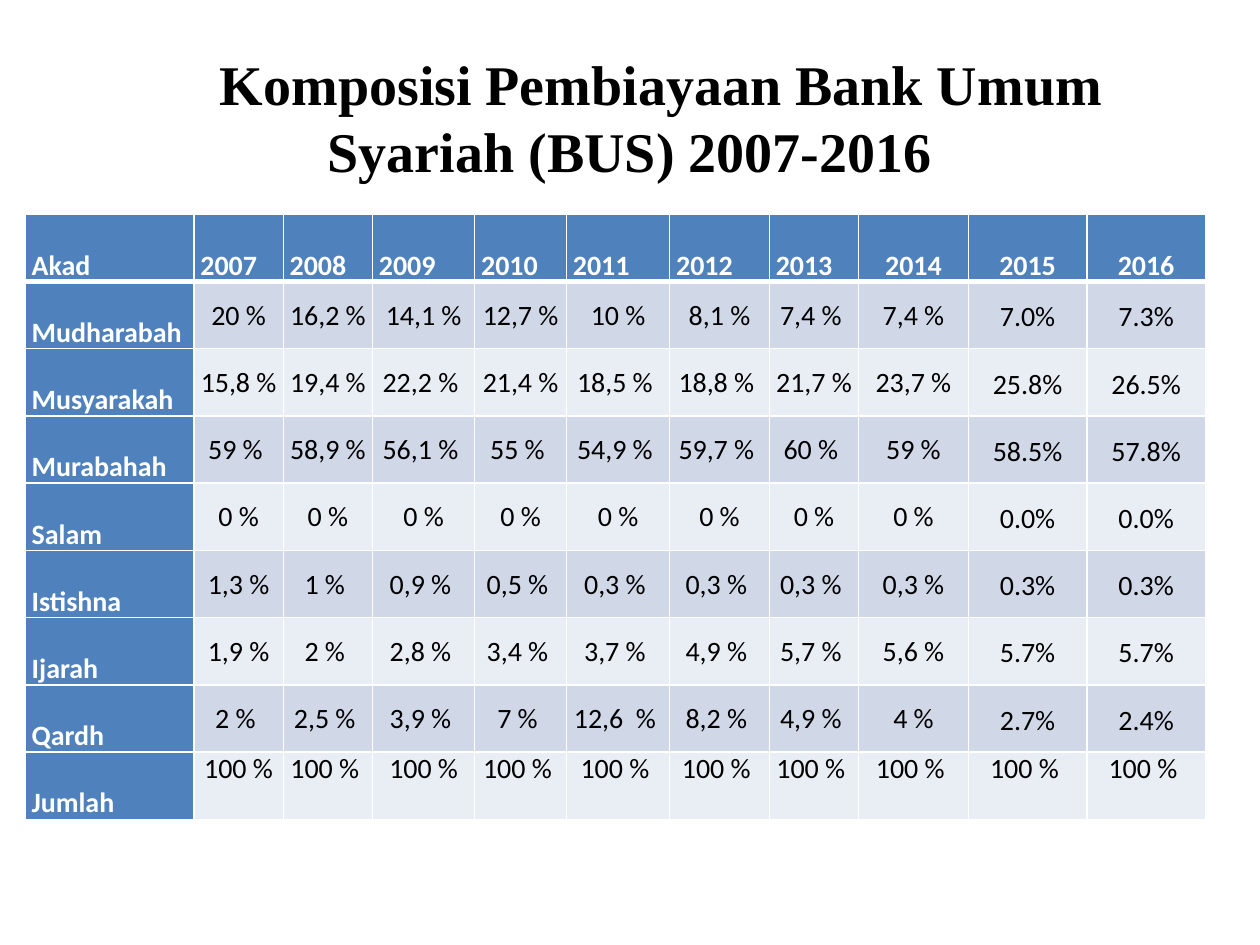
from lxml.etree import SubElement
from pptx import Presentation
from pptx.dml.color import RGBColor as RGB
from pptx.enum.text import MSO_ANCHOR as Anchor, PP_ALIGN as Align
from pptx.oxml.ns import qn
from pptx.util import Cm, Pt

COLORS = {"ink": "000000", "paper": "FFFFFF", "head": "4F81BD",
          "odd": "D0D8E8", "even": "E9EDF4"}

YEARS = range(2007, 2017)
COLUMN_WIDTHS = [3.4, 1.8, 1.8, 2.06, 1.85, 2.08, 2.01, 1.8, 2.21, 2.39, 2.39]
ROW_HEIGHT = 1.22
FIRST_CENTRED_YEAR = 8   # column of 2014
FIRST_TIGHT_YEAR = 9     # column of 2015

# Shares per contract and year; a trailing space shifts the centred figure
SHARES = {
    "Mudharabah": "20 %|16,2 %|14,1 %|12,7 %|10 %|8,1 %|7,4 % |7,4 %|7.0%|7.3%",
    "Musyarakah": "15,8 % |19,4 %|22,2 % |21,4 % |18,5 % |18,8 % |21,7 % |23,7 %|25.8%|26.5%",
    "Murabahah": "59 % |58,9 % |56,1 % |55 % |54,9 % |59,7 % |60 % |59 %|58.5%|57.8%",
    "Salam": "0 %|0 %|0 %|0 %|0 %|0 %|0 %|0 %|0.0%|0.0%",
    "Istishna": "1,3 %|1 % |0,9 % |0,5 % |0,3 % |0,3 % |0,3 % |0,3 %|0.3%|0.3%",
    "Ijarah": "1,9 %|2 % |2,8 % |3,4 % |3,7 % |4,9 % |5,7 % |5,6 %|5.7%|5.7%",
    "Qardh": "2 % |2,5 % |3,9 % |7 % |12,6  % |8,2 % |4,9 % |4 %|2.7%|2.4%",
    "Jumlah": "100 %|100 % |100 %|100 % |100 % |100 % |100 % |100 % |100 % |100 % ",
}


class Deck:
    def __init__(self, slide, colors):
        self.slide = slide
        self.colors = colors

    def text(self, frame, words, font, size, color, bold, align, spacing=1.0):
        paragraph = frame.paragraphs[0]
        paragraph.text = words
        paragraph.alignment = align
        paragraph.line_spacing = spacing
        paragraph.font.name = font
        paragraph.font.size = Pt(size)
        paragraph.font.bold = bold
        paragraph.font.color.rgb = RGB.from_string(self.colors[color])
        return paragraph

    def title(self, words, left, top, width, height):
        frame = self.slide.shapes.add_textbox(
            Cm(left), Cm(top), Cm(width), Cm(height)).text_frame
        frame.word_wrap = True
        frame.vertical_anchor = Anchor.MIDDLE
        paragraph = self.text(frame, words, "Times New Roman", 32, "ink", True, Align.CENTER)
        paragraph._p.get_or_add_pPr().set("indent", str(Cm(1.27)))

    def borders(self, cell, top, bottom):
        properties = cell._tc.get_or_add_tcPr()
        for side, points in (("L", 1), ("R", 1), ("T", top), ("B", bottom)):
            line = SubElement(properties, qn(f"a:ln{side}"), w=str(Pt(points)))
            fill = SubElement(line, qn("a:solidFill"))
            SubElement(fill, qn("a:srgbClr"), val=self.colors["paper"])

    def cell(self, cell, words, row, column, last_row):
        is_label = row == 0 or column == 0
        is_tight = 0 < row < last_row and column >= FIRST_TIGHT_YEAR
        # Borders come before the fill in the cell properties
        self.borders(cell, top=3 if row == 1 else 1, bottom=3 if row == 0 else 1)
        fill = "head" if is_label else ("odd" if row % 2 else "even")
        cell.fill.solid()
        cell.fill.fore_color.rgb = RGB.from_string(self.colors[fill])
        cell.margin_left = cell.margin_right = Cm(0.03 if is_tight else 0.13)
        cell.margin_top = Cm(0.03 if is_tight else 0)
        cell.margin_bottom = Cm(0)
        if is_label:
            centred = column >= FIRST_CENTRED_YEAR
            align, spacing = Align.CENTER if centred else Align.JUSTIFY, 2.0
        else:
            align, spacing = Align.CENTER, 1.0 if row == last_row else 1.5
        self.text(cell.text_frame, words, "Calibri", 16,
                  "paper" if is_label else "ink", is_label, align, spacing)

    def table(self, rows, widths, left, top, row_height):
        table = self.slide.shapes.add_table(
            len(rows), len(widths), Cm(left), Cm(top),
            Cm(sum(widths)), Cm(row_height * len(rows))).table
        for column, width in zip(table.columns, widths):
            column.width = Cm(width)
        for r, entries in enumerate(rows):
            table.rows[r].height = Cm(row_height)
            for c, words in enumerate(entries):
                self.cell(table.cell(r, c), words, r, c, len(rows) - 1)


def main():
    presentation = Presentation()
    presentation.slide_width, presentation.slide_height = Cm(25.4), Cm(19.05)
    deck = Deck(presentation.slides.add_slide(presentation.slide_layouts[6]), COLORS)

    # Heading
    deck.title("Komposisi Pembiayaan Bank Umum Syariah (BUS) 2007-2016",
               1.27, 0.76, 22.86, 3.18)

    # Financing shares by contract
    rows = [["Akad", *map(str, YEARS)]]
    rows += [[contract, *shares.split("|")] for contract, shares in SHARES.items()]
    deck.table(rows, COLUMN_WIDTHS, 0.51, 4.32, ROW_HEIGHT)

    presentation.save("out.pptx")


if __name__ == "__main__":
    main()
